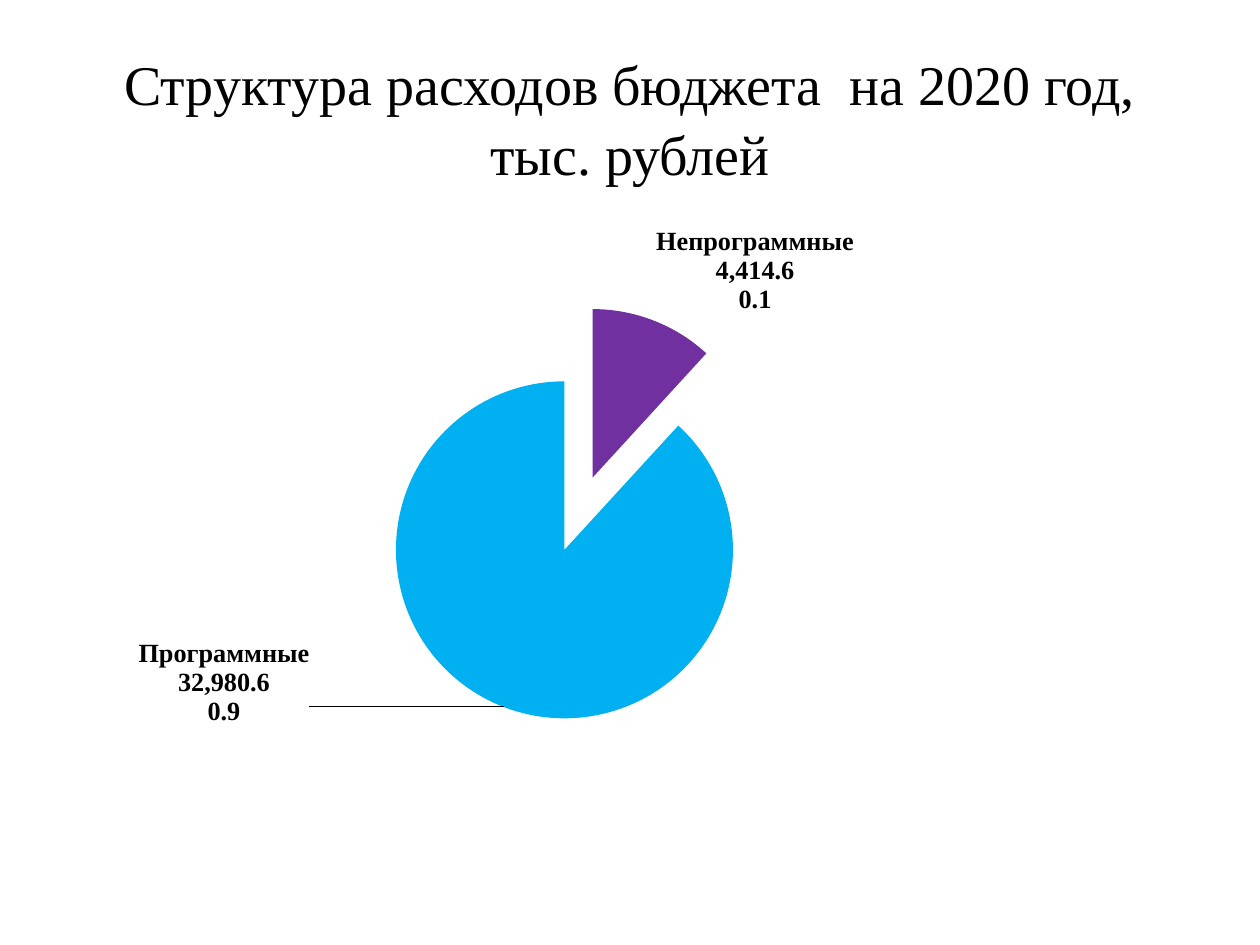
from copy import deepcopy
from dataclasses import dataclass

from lxml import etree
from pptx import Presentation
from pptx.chart import data as chart_data
from pptx.dml import color
from pptx.enum import chart as chart_enum, text
from pptx.oxml import ns
from pptx.util import Pt

PX = 914400 // 126  # EMU in one px


@dataclass(frozen=True)
class Theme:
    ink: str = "000000"
    slices: tuple = ("7030A0", "00B0F0")
    serif: str = "Times New Roman"
    sans: str = "Calibri"
    title_size: int = 32
    chart_size: int = 18
    label_size: int = 15


THEME = Theme()


def emu(*lengths):
    return [length * PX for length in lengths]


def style_font(font, **values):
    for name, value in values.items():
        setattr(font, name, value)
    font.color.rgb = color.RGBColor.from_string(THEME.ink)


def add_child(parent, tag, index=None, **attributes):
    child = etree.Element(ns.qn(tag), attributes)
    parent.insert(len(parent) if index is None else index, child)
    return child


def add_layout(parent, index, target=None, **fractions):
    """Manual layout, in fractions of the chart's size."""
    manual = add_child(add_child(parent, "c:layout", index), "c:manualLayout")
    if target:
        add_child(manual, "c:layoutTarget", val=target)
        for mode in ("xMode", "yMode"):
            add_child(manual, f"c:{mode}", val="edge")
    for name, value in fractions.items():
        add_child(manual, f"c:{name}", val=str(value))


def add_title(slide, box, wording):
    shape = slide.shapes.add_textbox(*emu(*box))
    frame = shape.text_frame
    frame.word_wrap = True
    frame.vertical_anchor = text.MSO_ANCHOR.MIDDLE
    paragraph = frame.paragraphs[0]
    paragraph.alignment = text.PP_ALIGN.CENTER
    paragraph.line_spacing = 1.04
    run = paragraph.add_run()
    run.text = wording
    style_font(run.font, name=THEME.serif, size=Pt(THEME.title_size))


def style_labels(series):
    labels = series.data_labels
    settings = {
        "show_category_name": True,
        "show_value": True,
        "show_percentage": True,
        "show_legend_key": False,
        "number_format": "#,##0.0",
        "number_format_is_linked": False,
        "position": chart_enum.XL_LABEL_POSITION.BEST_FIT,
    }
    for name, value in settings.items():
        setattr(labels, name, value)
    style_font(labels.font, name=THEME.serif, size=Pt(THEME.label_size), bold=True)
    return series._element.find(ns.qn("c:dLbls"))


def move_label(labels, point, x, y):
    """Shift one label from its usual place, keeping the shared format."""
    shared = [deepcopy(child) for child in labels
              if child.tag not in (ns.qn("c:showLeaderLines"), ns.qn("c:leaderLines"))]
    label = add_child(labels, "c:dLbl", 0)
    add_child(label, "c:idx", val=str(point))
    add_layout(label, 1, x=x, y=y)
    label.extend(shared)
    # Each part of the label stands on its own line
    separator = etree.Element(ns.qn("c:separator"))
    separator.text = "\n"
    for parent in (label, labels):
        parent.find(ns.qn("c:showBubbleSize")).addnext(deepcopy(separator))


def add_spending_pie(slide, box, spending):
    values = chart_data.CategoryChartData(number_format="#,##0.0")
    values.categories = list(spending)
    values.add_series("Series 1", list(spending.values()))
    chart = slide.shapes.add_chart(
        chart_enum.XL_CHART_TYPE.PIE, *emu(*box), values).chart
    chart.has_legend = False
    chart.has_title = False
    style_font(chart.font, name=THEME.sans, size=Pt(THEME.chart_size))
    plot = chart.plots[0]
    plot.vary_by_categories = True
    series = plot.series[0]

    # Slices, pulled apart
    for index, fill_color in enumerate(THEME.slices):
        slice_format = series.points[index].format
        slice_format.fill.solid()
        slice_format.fill.fore_color.rgb = color.RGBColor.from_string(fill_color)
        slice_format.line.fill.background()
    first_point = series._element.find(ns.qn("c:dPt"))
    add_child(series._element, "c:explosion",
              series._element.index(first_point), val="23")

    # Labels
    move_label(style_labels(series), 1, x=-0.18, y=-0.12)

    # Place of the pie within the chart
    plot_area = plot._element.getparent()
    old_layout = plot_area.find(ns.qn("c:layout"))
    if old_layout is not None:
        plot_area.remove(old_layout)
    add_layout(plot_area, 0, "inner", x=0.29, y=0.16, w=0.39, h=0.67)


def main():
    presentation = Presentation()
    presentation.slide_width, presentation.slide_height = emu(1260, 945)
    slide = presentation.slides.add_slide(presentation.slide_layouts[6])
    add_title(slide, (63, 38, 1134, 158),
              "Структура расходов бюджета  на 2020 год, тыс. рублей")
    add_spending_pie(slide, (63, 204, 1063, 626),
                     {"Непрограммные": 4414.6, "Программные": 32980.6})
    presentation.save("out.pptx")


if __name__ == "__main__":
    main()
